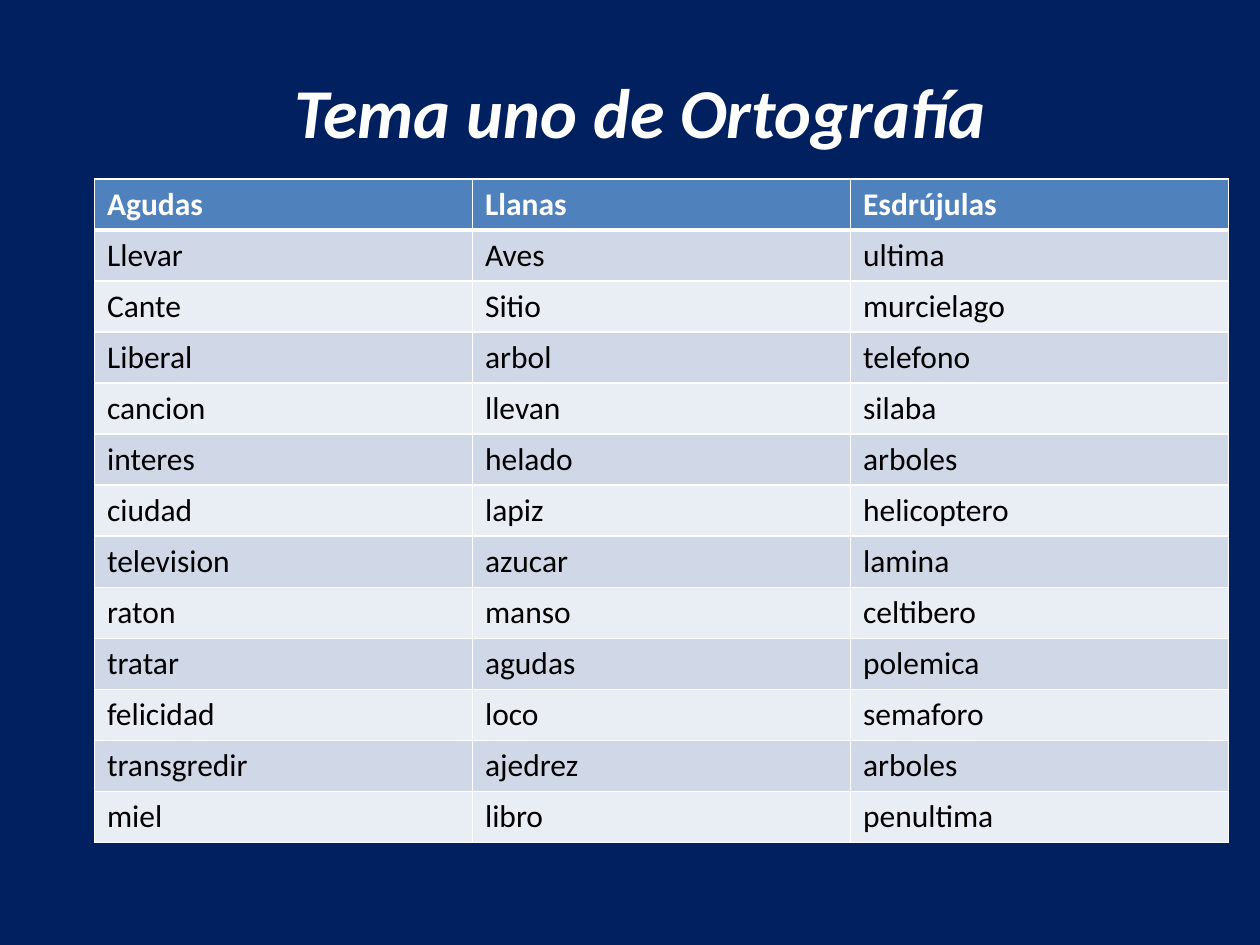
import dataclasses

import pptx
import pptx.dml.color
import pptx.enum.text
import pptx.oxml
import pptx.oxml.ns
import pptx.util

RGBColor = pptx.dml.color.RGBColor
Inches = pptx.util.Inches
Pt = pptx.util.Pt

NAVY = RGBColor(0x00, 0x20, 0x60)
WHITE = RGBColor(0xFF, 0xFF, 0xFF)
BLACK = RGBColor(0x00, 0x00, 0x00)
BLUE = RGBColor(0x4F, 0x81, 0xBD)
BAND_DARK = RGBColor(0xD0, 0xD8, 0xE8)
BAND_LIGHT = RGBColor(0xE9, 0xED, 0xF4)
FONT = "Calibri"


@dataclasses.dataclass(frozen=True)
class RowStyle:
    fill: RGBColor
    color: RGBColor
    bold: bool
    top: float = 1
    bottom: float = 1


HEADER = RowStyle(BLUE, WHITE, True, bottom=3)
FIRST = RowStyle(BAND_DARK, BLACK, False, top=3)
DARK = RowStyle(BAND_DARK, BLACK, False)
LIGHT = RowStyle(BAND_LIGHT, BLACK, False)

WORDS = [
    ("Agudas", "Llanas", "Esdrújulas"),
    ("Llevar", "Aves", "ultima"),
    ("Cante", "Sitio", "murcielago"),
    ("Liberal", "arbol", "telefono"),
    ("cancion", "llevan", "silaba"),
    ("interes", "helado", "arboles"),
    ("ciudad", "lapiz", "helicoptero"),
    ("television", "azucar", "lamina"),
    ("raton", "manso", "celtibero"),
    ("tratar", "agudas", "polemica"),
    ("felicidad", "loco", "semaforo"),
    ("transgredir", "ajedrez", "arboles"),
    ("miel", "libro", "penultima"),
]


def row_style(index: int) -> RowStyle:
    if index < 2:
        return (HEADER, FIRST)[index]
    return DARK if index % 2 else LIGHT


def style_font(p, size: float, color: RGBColor, bold: bool) -> None:
    p.font.name = FONT
    p.font.size = Pt(size)
    p.font.bold = bold
    p.font.color.rgb = color


def add_border(cell, side: str, width: float) -> None:
    cell._tc.get_or_add_tcPr().append(pptx.oxml.parse_xml(
        f'<a:ln{side} {pptx.oxml.ns.nsdecls("a")} w="{Pt(width)}">'
        f'<a:solidFill><a:srgbClr val="{WHITE}"/></a:solidFill></a:ln{side}>'))


def fill_cell(cell, text: str, style: RowStyle) -> None:
    cell.text = text
    style_font(cell.text_frame.paragraphs[0], 18, style.color, style.bold)
    for side, width in zip("LRTB", (1, 1, style.top, style.bottom)):
        add_border(cell, side, width)
    cell.fill.solid()
    cell.fill.fore_color.rgb = style.fill


def add_title(slide, text: str) -> None:
    sp = slide.shapes.add_textbox(Inches(0.58), Inches(0.5), Inches(9), Inches(0.75))
    tf = sp.text_frame
    tf.word_wrap = True
    tf.vertical_anchor = pptx.enum.text.MSO_ANCHOR.MIDDLE
    p = tf.paragraphs[0]
    p.text = text
    p.alignment = pptx.enum.text.PP_ALIGN.CENTER
    style_font(p, 40, WHITE, True)
    p.font.italic = True


def add_word_table(slide, words: list[tuple[str, ...]]) -> None:
    table = slide.shapes.add_table(
        len(words), len(words[0]),
        Inches(0.75), Inches(1.42), Inches(9), Inches(5.27)).table
    for i, row in enumerate(words):
        for j, word in enumerate(row):
            fill_cell(table.cell(i, j), word, row_style(i))


def main() -> None:
    """Build the spelling slide with its table of words by stress."""
    prs = pptx.Presentation()
    prs.slide_width, prs.slide_height = Inches(10), Inches(7.5)
    slide = prs.slides.add_slide(prs.slide_layouts[6])
    slide.background.fill.solid()
    slide.background.fill.fore_color.rgb = NAVY
    add_title(slide, "Tema uno de Ortografía")
    add_word_table(slide, WORDS)
    prs.save("out.pptx")


if __name__ == "__main__":
    main()
